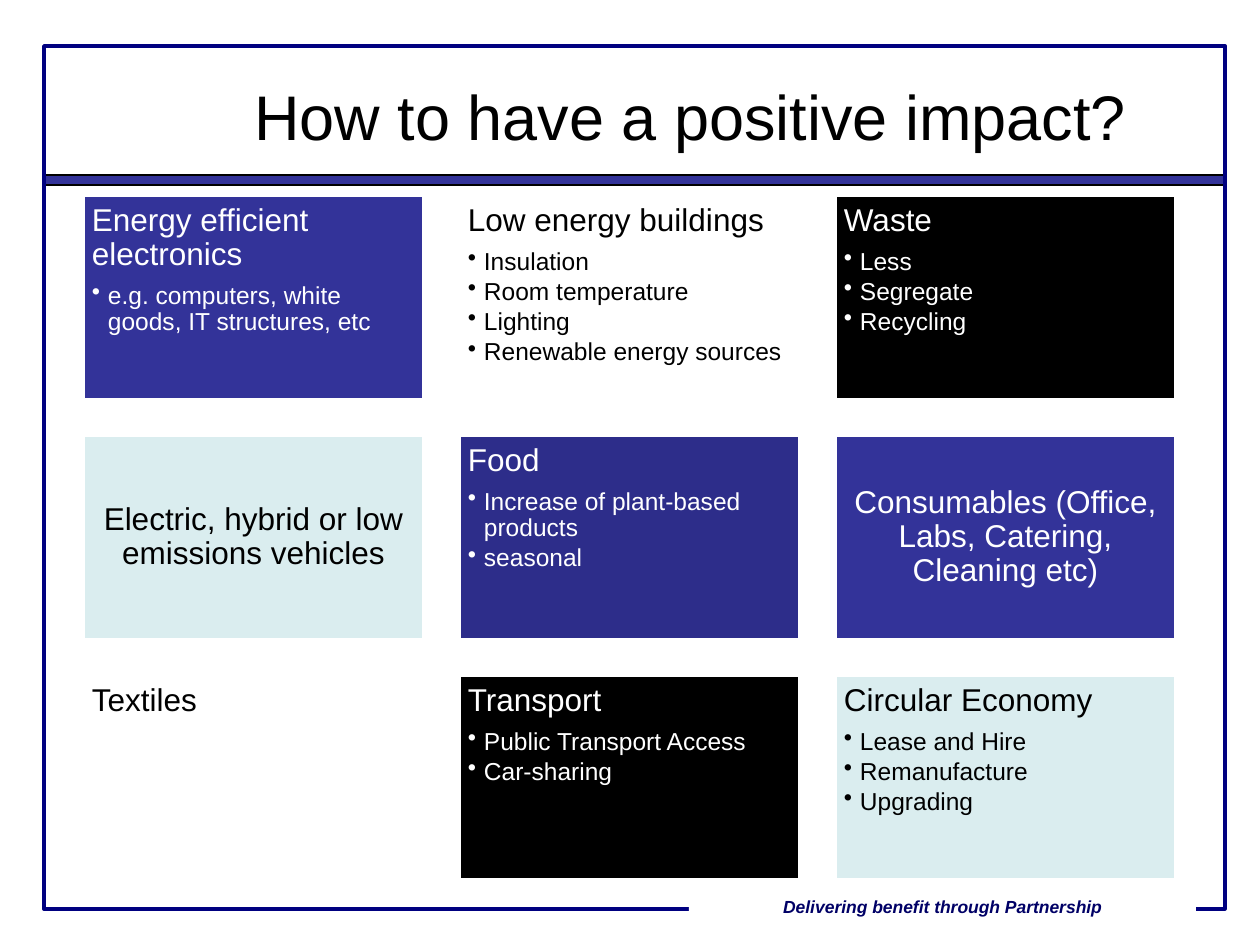
from lxml import etree
from pptx import Presentation
from pptx import util as u
from pptx.dml.color import RGBColor
from pptx.enum import shapes, text
from pptx.oxml.ns import qn

PX = 914400 / 126  # EMU in one px

BLACK = RGBColor(0x00, 0x00, 0x00)
WHITE = RGBColor(0xFF, 0xFF, 0xFF)
NAVY = RGBColor(0x00, 0x00, 0x80)
FOOTER_BLUE = RGBColor(0x00, 0x00, 0x66)
INDIGO = RGBColor(0x33, 0x33, 0x99)
DEEP_INDIGO = RGBColor(0x2D, 0x2D, 0x8A)
PALE_TEAL = RGBColor(0xDA, 0xED, 0xEF)

FONT = "Arial"
COLUMNS = 3
CARD_LEFT, CARD_TOP = 83, 195
CARD_WIDTH, CARD_HEIGHT = 341, 205
STEP_X, STEP_Y = 376, 240
INSET = 9
BULLET_INDENT = 16

# Fill, text colour, heading, bullets (None centres the heading)
CARDS = [
    (INDIGO, WHITE, "Energy efficient electronics",
     ["e.g. computers, white goods, IT structures, etc"]),
    (WHITE, BLACK, "Low energy buildings",
     ["Insulation", "Room temperature", "Lighting", "Renewable energy sources"]),
    (BLACK, WHITE, "Waste", ["Less", "Segregate", "Recycling"]),
    (PALE_TEAL, BLACK, "Electric, hybrid or low emissions vehicles", None),
    (DEEP_INDIGO, WHITE, "Food", ["Increase of plant-based products", "seasonal"]),
    (INDIGO, WHITE, "Consumables (Office, Labs, Catering, Cleaning etc)", None),
    (WHITE, BLACK, "Textiles", []),
    (BLACK, WHITE, "Transport", ["Public Transport Access", "Car-sharing"]),
    (PALE_TEAL, BLACK, "Circular Economy",
     ["Lease and Hire", "Remanufacture", "Upgrading"]),
]


def px(length):
    return u.Emu(round(length * PX))


def add_rect(page, left, top, width, height, fill=None, line=None, weight=2):
    box = page.shapes.add_shape(shapes.MSO_SHAPE.RECTANGLE,
                                px(left), px(top), px(width), px(height))
    box.shadow.inherit = False
    if fill is None:
        box.fill.background()
    else:
        box.fill.solid()
        box.fill.fore_color.rgb = fill
    if line is None:
        box.line.fill.background()
    else:
        box.line.color.rgb = line
        box.line.width = u.Pt(weight)
    return box


def add_run(para, words, size, color, bold=False, italic=False):
    span = para.add_run()
    span.text = words
    span.font.name = FONT
    span.font.size = u.Pt(size)
    span.font.color.rgb = color
    span.font.bold = bold
    span.font.italic = italic


def set_spacing(para, after_percent):
    """Tight lines, with a gap after that is a share of the line height."""
    para.line_spacing = 0.9
    after = etree.SubElement(para._p.get_or_add_pPr(), qn("a:spcAft"))
    etree.SubElement(after, qn("a:spcPct")).set("val", str(after_percent * 1000))


def add_bullet(frame, words, color):
    para = frame.add_paragraph()
    para.level = 1
    para.alignment = text.PP_ALIGN.LEFT
    set_spacing(para, 15)
    props = para._p.get_or_add_pPr()
    props.set("marL", str(px(BULLET_INDENT)))
    props.set("indent", str(-px(BULLET_INDENT)))
    etree.SubElement(props, qn("a:buChar")).set("char", "•")
    add_run(para, words, 14, color)


def add_card(page, index, fill, color, heading, bullets):
    row, column = divmod(index, COLUMNS)
    box = add_rect(page, CARD_LEFT + column * STEP_X, CARD_TOP + row * STEP_Y,
                   CARD_WIDTH, CARD_HEIGHT, fill, WHITE)
    frame = box.text_frame
    frame.word_wrap = True
    frame.margin_left = frame.margin_right = px(INSET)
    frame.margin_top = frame.margin_bottom = px(INSET)
    centred = bullets is None
    frame.vertical_anchor = (text.MSO_ANCHOR.MIDDLE if centred
                             else text.MSO_ANCHOR.TOP)
    para = frame.paragraphs[0]
    para.alignment = text.PP_ALIGN.CENTER if centred else text.PP_ALIGN.LEFT
    set_spacing(para, 35)
    add_run(para, heading, 18, color)
    for words in bullets or []:
        add_bullet(frame, words, color)


def add_title(page, words):
    box = page.shapes.add_textbox(px(203), px(66), px(992), px(99))
    frame = box.text_frame
    frame.word_wrap = True
    frame.vertical_anchor = text.MSO_ANCHOR.MIDDLE
    para = frame.paragraphs[0]
    para.alignment = text.PP_ALIGN.CENTER
    add_run(para, words, 36, BLACK)


def add_footer(page, words):
    box = add_rect(page, 689, 890, 507, 34, WHITE)
    frame = box.text_frame
    frame.word_wrap = True
    frame.vertical_anchor = text.MSO_ANCHOR.TOP
    para = frame.paragraphs[0]
    para.alignment = text.PP_ALIGN.CENTER
    add_run(para, words, 10, FOOTER_BLUE, bold=True, italic=True)


def main():
    deck = Presentation()
    deck.slide_width, deck.slide_height = px(1260), px(945)
    page = deck.slides.add_slide(deck.slide_layouts[6])

    # Rule under the title, page frame and footer
    add_rect(page, 44, 175, 1181, 10, INDIGO, BLACK, 0.75)
    add_rect(page, 44, 46, 1181, 863, line=NAVY)
    add_footer(page, "Delivering benefit through Partnership")

    # Title and grid of cards
    add_title(page, "How to have a positive impact? ")
    for index, card in enumerate(CARDS):
        add_card(page, index, *card)

    deck.save("out.pptx")


if __name__ == "__main__":
    main()
